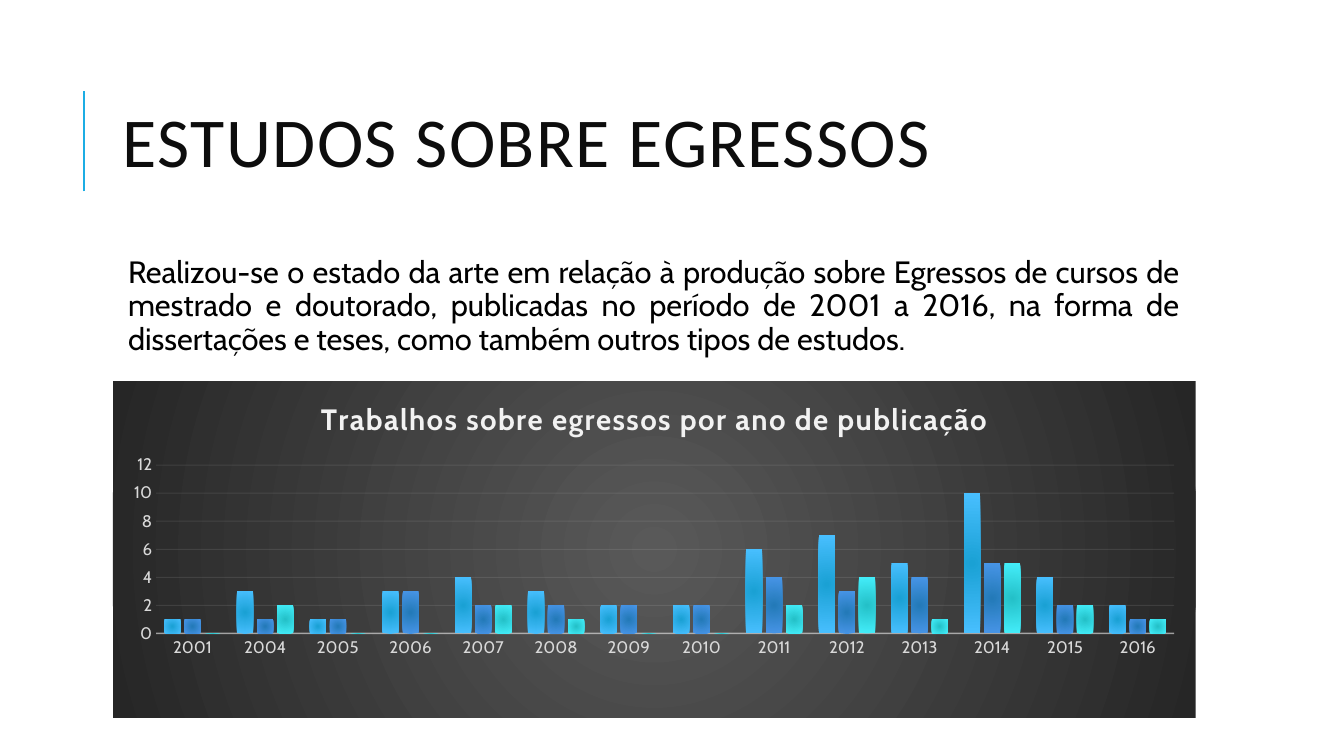
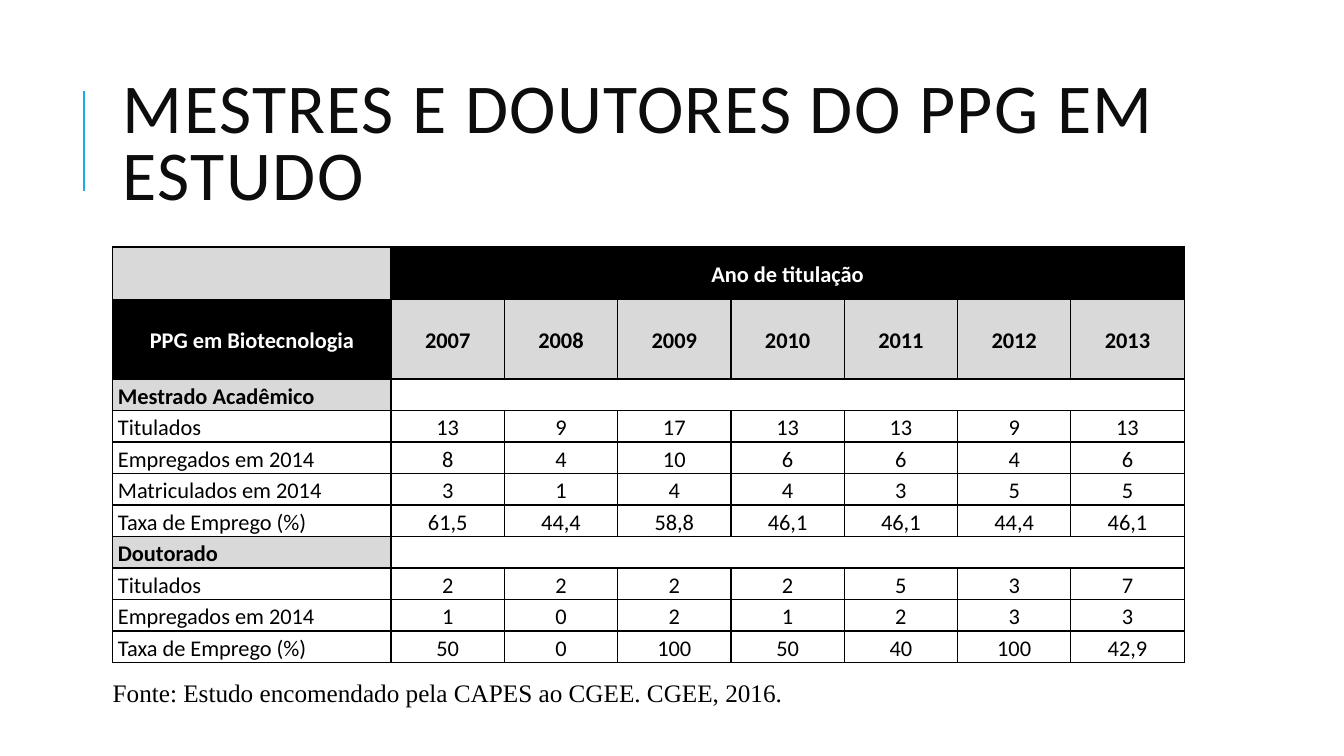
from pptx import Presentation, oxml
from pptx import util as u
from pptx.chart import data as chart_data
from pptx.dml import color
from pptx.enum import chart as ch
from pptx.enum import shapes, text
from pptx.oxml import ns

INK, BLACK, WHITE, GREY, ACCENT = "0D0D0D", "000000", "FFFFFF", "D9D9D9", "1CADE4"
PALE = "F2F2F2"
LEFT, WIDTH = 8.4, 79.74
ALIGN, ANCHOR = text.PP_ALIGN, text.MSO_ANCHOR


def rgb(value):
    """Turn a hex string into a colour."""
    return color.RGBColor.from_string(value)


def element(tag, inner="", **attributes):
    """Build one XML element with the drawing and chart namespaces."""
    listed = "".join(f' {key}="{value}"' for key, value in attributes.items())
    return oxml.parse_xml(f"<{tag} {ns.nsdecls('a', 'c')}{listed}>{inner}</{tag}>")


def radial(inner, outer, focus):
    """Build a circular gradient fill focused at a percentage."""
    stops = "".join(f'<a:gs pos="{pos}"><a:srgbClr val="{tone}"/></a:gs>'
                    for pos, tone in ((0, inner), (100000, outer)))
    sides = " ".join(f'{side}="{focus * 1000}"' for side in "ltrb")
    return element("a:gradFill", f'<a:gsLst>{stops}</a:gsLst><a:path path="circle">'
                                 f"<a:fillToRect {sides}/></a:path>")


def translucent(line, tone, width, opacity):
    """Paint a line with partial opacity in percent."""
    line.color.rgb, line.width = rgb(tone), u.Pt(width)
    ln = line._get_or_add_ln()
    ln.find(".//" + ns.qn("a:srgbClr")).append(element("a:alpha", val=opacity * 1000))


def style(font, size, face, tone, bold=False):
    """Set the size, face, colour and weight of a font."""
    font.size, font.name, font.bold = u.Pt(size), face, bold
    font.color.rgb = rgb(tone)


class Deck:
    """Hold the shared style and the current slide; lengths are percent of the slide."""

    def __init__(self):
        """Start a wide presentation."""
        self.deck = Presentation()
        self.deck.slide_width, self.deck.slide_height = u.Inches(13.33), u.Inches(7.5)
        self.slide = None

    def across(self, share):
        """Measure a share of the slide width."""
        return round(self.deck.slide_width * share / 100)

    def down(self, share):
        """Measure a share of the slide height."""
        return round(self.deck.slide_height * share / 100)

    def box(self, x, y, w, h):
        """Measure a rectangle."""
        return self.across(x), self.down(y), self.across(w), self.down(h)

    def place(self, holder, *area):
        """Move a placeholder to an area."""
        holder.left, holder.top, holder.width, holder.height = self.box(*area)
        holder.text_frame.auto_size = text.MSO_AUTO_SIZE.NONE
        holder.text_frame.word_wrap = True

    def master_rule(self):
        """Put the vertical accent line on the slide master."""
        x = self.across(6.23)
        rule = self.slide.shapes.add_connector(
            shapes.MSO_CONNECTOR.STRAIGHT, x, self.down(25.33), x, self.down(12))
        rule.line.color.rgb, rule.line.width = rgb(ACCENT), u.Pt(1.5)
        rule.element.spPr.append(element("a:effectLst"))
        self.deck.slide_master.element.cSld.spTree.append(rule.element)

    def page(self, heading, layout):
        """Add a slide with its title."""
        self.slide = self.deck.slides.add_slide(self.deck.slide_layouts[layout])
        if len(self.deck.slides) == 1:
            self.master_rule()
        title = self.slide.shapes.title
        self.place(title, LEFT, 8.53, WIDTH, 21.87)
        title.text_frame.text = heading
        title.text_frame.vertical_anchor = ANCHOR.MIDDLE
        line = title.text_frame.paragraphs[0]
        line.alignment, line.line_spacing = ALIGN.LEFT, 0.8
        style(line.runs[0].font, 50, "Calibri", INK)
        line.runs[0].font._element.set("spc", "100")

    def body(self, wording):
        """Fill the body placeholder with a justified paragraph."""
        holder = self.slide.placeholders[1]
        self.place(holder, LEFT, 33.33, WIDTH, 58.67)
        frame = holder.text_frame
        frame.margin_left = frame.margin_right = u.Inches(0.05)
        frame.margin_top = frame.margin_bottom = u.Inches(0.05)
        frame.text = wording
        line = frame.paragraphs[0]
        line.alignment, line.line_spacing = ALIGN.JUSTIFY, 0.9
        line.space_before, line.space_after = u.Pt(0), u.Pt(2)
        properties = line._p.get_or_add_pPr()
        properties.set("marL", str(u.Inches(0.1)))
        properties.set("indent", str(-u.Inches(0.1)))
        properties.append(element("a:buClr", f'<a:srgbClr val="{ACCENT}"/>'))
        properties.append(element("a:buChar", char=" "))
        style(line.runs[0].font, 22, "Cabin", BLACK)

    def columns(self, heading, years, groups):
        """Add a dark clustered column chart; groups are values, inner, outer."""
        figures = chart_data.CategoryChartData()
        figures.categories = years
        for values, _, _ in groups:
            figures.add_series("", values)
        chart = self.slide.shapes.add_chart(
            ch.XL_CHART_TYPE.COLUMN_CLUSTERED,
            *self.box(LEFT, 50.4, 80.57, 44.53), figures).chart
        style(chart.font, 10, "Cabin", BLACK)
        chart.has_legend = False
        chart.has_title = True
        chart.chart_title.text_frame.text = heading
        title_font = chart.chart_title.text_frame.paragraphs[0].runs[0].font
        style(title_font, 21, "Cabin", PALE, True)
        title_font._element.set("spc", "100")
        backdrop = element("c:spPr")
        backdrop.append(radial("595959", "262626", 50))
        backdrop.append(element("a:ln", "<a:noFill/>"))
        chart._chartSpace.find(ns.qn("c:chart")).addnext(backdrop)
        self.plot_area(chart)
        plot = chart.plots[0]
        plot.gap_width, plot.overlap, plot.vary_by_categories = 100, -24, False
        for series, (_, inner, outer) in zip(plot.series, groups):
            series._element.get_or_add_spPr().append(radial(inner, outer, 100))
        for axis in (chart.category_axis, chart.value_axis):
            axis.major_tick_mark = axis.minor_tick_mark = ch.XL_TICK_MARK.NONE
            style(axis.tick_labels.font, 12, "Cabin", GREY)
        translucent(chart.category_axis.format.line, PALE, 1, 54)
        scale = chart.value_axis
        scale.minimum_scale, scale.maximum_scale, scale.major_unit = 0, 12, 2
        scale.format.line.fill.background()
        translucent(scale.major_gridlines.format.line, PALE, 0.75, 10)

    def plot_area(self, chart):
        """Fix the inner plot area of a chart."""
        area = next(chart._chartSpace.iter(ns.qn("c:plotArea")))
        for old in area.findall(ns.qn("c:layout")):
            area.remove(old)
        shares = (("x", 0.04), ("y", 0.25), ("w", 0.94), ("h", 0.5))
        modes = '<c:xMode val="edge"/><c:yMode val="edge"/>'
        sizes = "".join(f'<c:{side} val="{share}"/>' for side, share in shares)
        area.insert(0, element("c:layout", "<c:manualLayout>"
                               f'<c:layoutTarget val="inner"/>{modes}{sizes}'
                               "</c:manualLayout>"))

    def cell(self, cell, wording, fill, tone, bold, align, anchor):
        """Fill and format one table cell with black borders."""
        properties = cell._tc.get_or_add_tcPr()
        for side in "LRTB":
            properties.append(element(
                f"a:ln{side}",
                f'<a:solidFill><a:srgbClr val="{BLACK}"/></a:solidFill>',
                w=u.Pt(1)))
        if fill:
            cell.fill.solid()
            cell.fill.fore_color.rgb = rgb(fill)
        else:
            cell.fill.background()
        cell.margin_left = cell.margin_right = u.Inches(0.05)
        cell.margin_top = cell.margin_bottom = 0
        cell.vertical_anchor = anchor
        if wording:
            cell.text_frame.text = wording
            line = cell.text_frame.paragraphs[0]
            line.alignment, line.line_spacing = align, 1.15
            style(line.runs[0].font, 16, "Calibri", tone, bold)

    def table(self, span_heading, corner, years, rows):
        """Add a table with two header rows; rows without values are sections."""
        grid = [["", span_heading], [corner, *years], *rows]
        widths = [20.7] + [8.43] * len(years)
        heights = [6.93, 10.53] + [4.13] * len(rows)
        table = self.slide.shapes.add_table(
            len(grid), len(widths),
            *self.box(LEFT, 32.67, sum(widths), sum(heights))).table
        table.first_row = table.horz_banding = False
        for column, width in zip(table.columns, widths):
            column.width = self.across(width)
        for row, height in zip(table.rows, heights):
            row.height = self.down(height)
        for r, row in enumerate(grid):
            section = len(row) == 1
            for c in range(len(widths)):
                wording = row[c] if c < len(row) else ""
                dark = (r == 0 and c > 0) or (r == 1 and c == 0)
                light = r < 2 or (section and c == 0)
                label = r > 1 and c == 0
                self.cell(table.cell(r, c), wording,
                          BLACK if dark else GREY if light else None,
                          WHITE if dark else BLACK, dark or light,
                          ALIGN.LEFT if label else ALIGN.CENTER,
                          ANCHOR.BOTTOM if label else ANCHOR.MIDDLE)
            if len(row) < len(widths):
                table.cell(r, 1).merge(table.cell(r, len(widths) - 1))

    def source(self, wording):
        """Add the source line under a table."""
        frame = self.slide.shapes.add_textbox(
            *self.box(7.65, 86.93, 78.62, 7.47)).text_frame
        frame.word_wrap = True
        frame.text = wording
        line = frame.paragraphs[0]
        line.alignment, line.line_spacing = ALIGN.JUSTIFY, 1.5
        style(line.runs[0].font, 18, "Times New Roman", BLACK)


def main():
    """Build the two slides and save them."""
    deck = Deck()
    deck.page("ESTUDOS SOBRE EGRESSOS", 1)
    deck.body("Realizou-se o estado da arte em relação à produção sobre Egressos de "
              "cursos de mestrado e doutorado, publicadas no período de 2001 a 2016, "
              "na forma de dissertações e teses, como também outros tipos de estudos.")
    deck.columns(
        "Trabalhos sobre egressos por ano de publicação",
        ["2001", *(str(year) for year in range(2004, 2017))],
        [((1, 3, 1, 3, 4, 3, 2, 2, 6, 7, 5, 10, 4, 2), "1AA1D4", "48BFFF"),
         ((1, 1, 1, 3, 2, 2, 2, 2, 4, 3, 4, 5, 2, 1), "237AB8", "4895E7"),
         ((0, 2, 0, 0, 2, 1, 0, 0, 2, 4, 1, 5, 2, 1), "24C0C8", "44EEFA")])

    deck.page("MESTRES E DOUTORES DO PPG EM ESTUDO", 5)
    deck.table(
        "Ano de titulação", "PPG em Biotecnologia",
        [str(year) for year in range(2007, 2014)],
        [["Mestrado Acadêmico"],
         ["Titulados", "13", "9", "17", "13", "13", "9", "13"],
         ["Empregados em 2014", "8", "4", "10", "6", "6", "4", "6"],
         ["Matriculados em 2014", "3", "1", "4", "4", "3", "5", "5"],
         ["Taxa de Emprego (%)", "61,5", "44,4", "58,8", "46,1", "46,1", "44,4", "46,1"],
         ["Doutorado"],
         ["Titulados", "2", "2", "2", "2", "5", "3", "7"],
         ["Empregados em 2014", "1", "0", "2", "1", "2", "3", "3"],
         ["Taxa de Emprego (%)", "50", "0", "100", "50", "40", "100", "42,9"]])
    deck.source("Fonte: Estudo encomendado pela CAPES ao CGEE. CGEE, 2016.")
    deck.deck.save("out.pptx")


if __name__ == "__main__":
    main()
